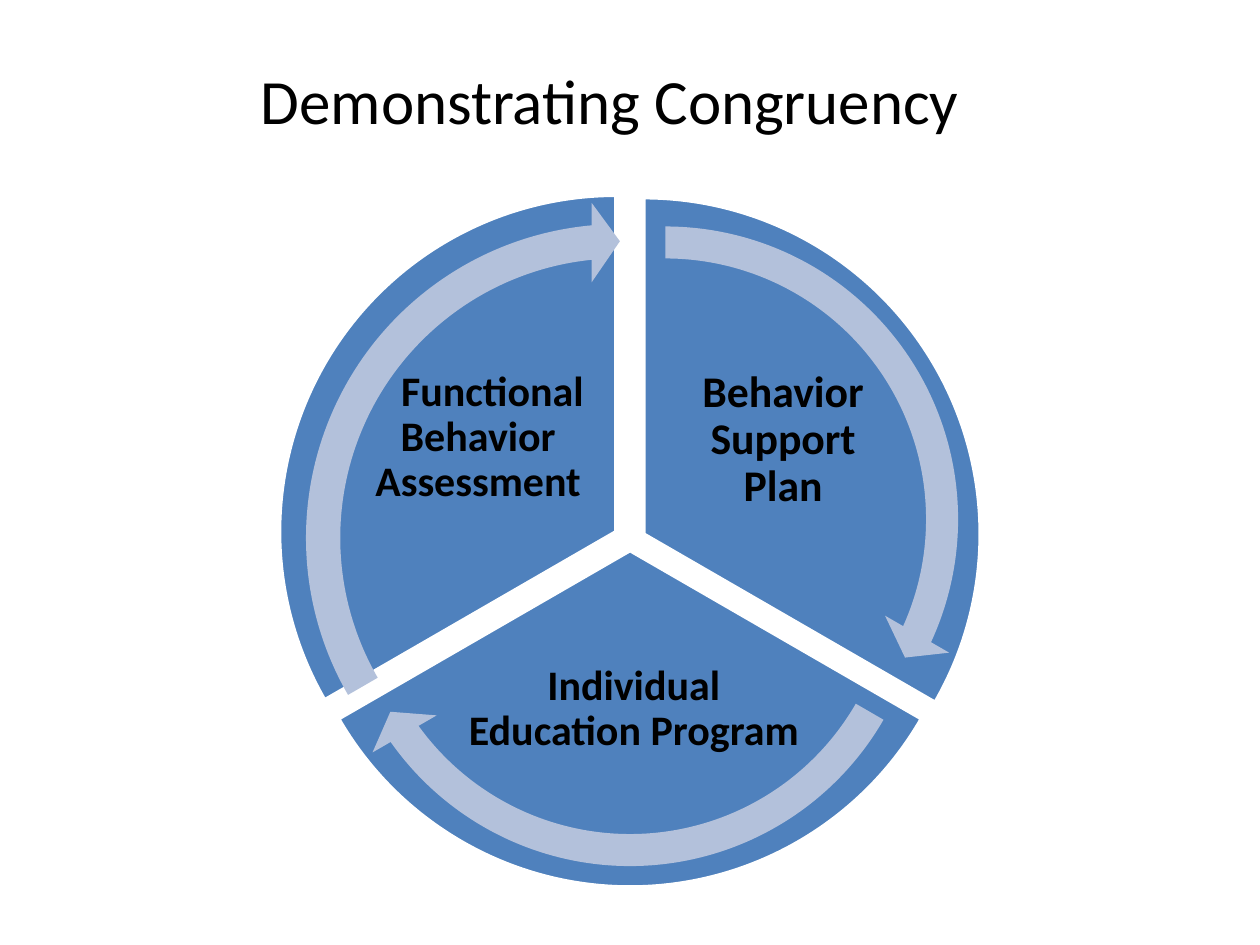
"""Build the Demonstrating Congruency slide: a three-part cycle with arrows."""
from dataclasses import dataclass

from pptx import Presentation
from pptx.dml.color import RGBColor
from pptx.enum.shapes import MSO_SHAPE
from pptx.enum.text import MSO_ANCHOR, PP_ALIGN
from pptx.util import Pt


@dataclass(frozen=True)
class Theme:
    font: str = "Calibri"
    text: RGBColor = RGBColor(0x00, 0x00, 0x00)
    sector: RGBColor = RGBColor(0x4F, 0x81, 0xBD)
    edge: RGBColor = RGBColor(0xFF, 0xFF, 0xFF)
    arrow: RGBColor = RGBColor(0xB3, 0xC1, 0xDB)
    title_size: float = 36
    label_size: float = 24
    large_label_size: float = 25


@dataclass(frozen=True)
class Label:
    text: str
    box: tuple[float, float, float, float]
    size: float
    indent: float = 0
    bottom: float = 2


@dataclass(frozen=True)
class Sector:
    left: float
    top: float
    angles: tuple[float, float]
    label: Label


@dataclass(frozen=True)
class Arrow:
    left: float
    top: float
    size: float
    end: float
    start: float


THEME = Theme()
DIAMETER = 384.5
UNITS_PER_DEGREE = 0.6

SECTORS = (
    Sector(175.7, 113, (270, 30), Label(
        "Behavior Support Plan", (378.7, 194.4, 137.5, 114.5), THEME.large_label_size)),
    Sector(167.8, 122.4, (30, 150), Label(
        "Individual Education Program", (259.2, 372.2, 206, 100.8), THEME.label_size, bottom=36.8)),
    Sector(159.8, 111.6, (150, 270), Label(
        "Functional Behavior Assessment", (204.5, 193, 137.5, 114.5), THEME.label_size, indent=16.3)),
)
ARROWS = (
    Arrow(200.9, 117.4, 358.6, 24.54, 269.99),
    Arrow(180.7, 148.3, 358.6, 144.53, 30.01),
    Arrow(162, 115.2, DIAMETER, 264.55, 150),
)


def add_text(shapes, text: str, box: tuple[float, float, float, float], *, size: float,
             bold: bool = False, spacing: float = 1, indent: float = 0,
             margins: tuple[float, float, float, float] = (2, 2, 2, 2)) -> None:
    tf = shapes.add_textbox(*map(Pt, box)).text_frame
    tf.word_wrap = True
    tf.vertical_anchor = MSO_ANCHOR.MIDDLE
    tf.margin_left, tf.margin_top, tf.margin_right, tf.margin_bottom = map(Pt, margins)
    p = tf.paragraphs[0]
    p.alignment = PP_ALIGN.CENTER
    p.line_spacing = spacing
    if indent:
        p._p.get_or_add_pPr().set("indent", str(Pt(indent)))
    r = p.add_run()
    r.text = text
    r.font.name = THEME.font
    r.font.size = Pt(size)
    r.font.bold = bold
    r.font.color.rgb = THEME.text


def add_round(shapes, kind: MSO_SHAPE, left: float, top: float, size: float,
              fill: RGBColor, adjustments: tuple[float, ...]):
    sp = shapes.add_shape(kind, Pt(left), Pt(top), Pt(size), Pt(size))
    sp.shadow.inherit = False
    sp.fill.solid()
    sp.fill.fore_color.rgb = fill
    for i, value in enumerate(adjustments):
        sp.adjustments[i] = value
    return sp


def add_sector(shapes, sector: Sector) -> None:
    angles = tuple(a * UNITS_PER_DEGREE for a in sector.angles)
    sp = add_round(shapes, MSO_SHAPE.PIE, sector.left, sector.top, DIAMETER, THEME.sector, angles)
    sp.line.color.rgb = THEME.edge
    sp.line.width = Pt(2)
    label = sector.label
    add_text(shapes, label.text, label.box, size=label.size, bold=True, spacing=0.9,
             indent=label.indent, margins=(2, 2, 2, label.bottom))


def add_arrow(shapes, arrow: Arrow) -> None:
    adjustments = (0.051, 3.275, arrow.end * UNITS_PER_DEGREE,
                   arrow.start * UNITS_PER_DEGREE, 0.059)
    sp = add_round(shapes, MSO_SHAPE.CIRCULAR_ARROW, arrow.left, arrow.top, arrow.size,
                   THEME.arrow, adjustments)
    sp.line.fill.background()


def main() -> None:
    prs = Presentation()
    prs.slide_width, prs.slide_height = Pt(720), Pt(540)
    s = prs.slides.add_slide(prs.slide_layouts[6])
    cycle = s.shapes.add_group_shape().shapes
    for sector in SECTORS:
        add_sector(cycle, sector)
    for arrow in ARROWS:
        add_arrow(cycle, arrow)
    add_text(s.shapes, "Demonstrating Congruency", (31.7, 11.5, 668.2, 90.7),
             size=THEME.title_size, margins=(7.2, 3.6, 41.7, 3.6))
    prs.save("out.pptx")


if __name__ == "__main__":
    main()
